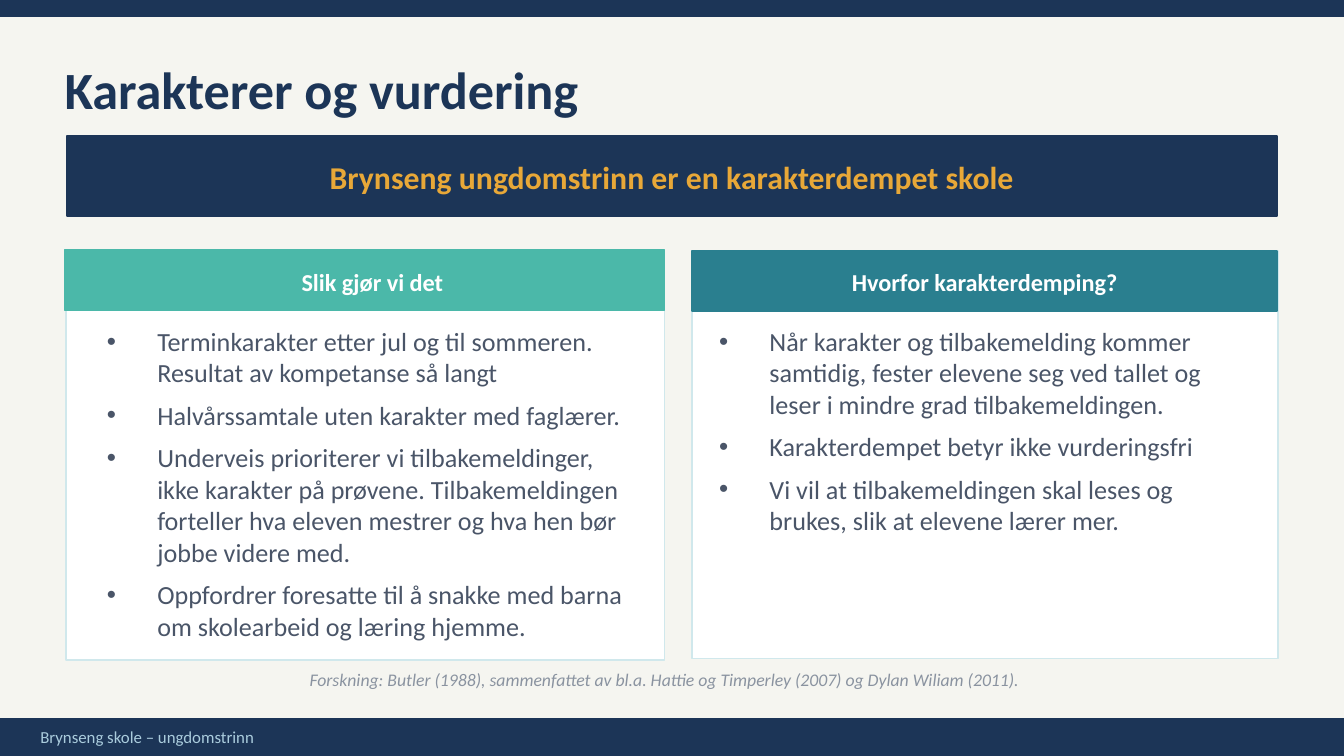
from lxml.etree import SubElement
from pptx import Presentation
from pptx.dml.color import RGBColor
from pptx.enum.shapes import MSO_SHAPE
from pptx.enum.text import MSO_ANCHOR, MSO_AUTO_SIZE, PP_ALIGN
from pptx.oxml.ns import qn
from pptx.util import Pt

PX = 4572  # 200 px to the inch
WIDTH, HEIGHT = 2000, 1125
FONT = "Calibri"
COLORS = {
    "background": "F5F5F0", "navy": "1C3557", "amber": "E8A838",
    "green": "4BB8A9", "teal": "2A7F8F", "white": "FFFFFF",
    "border": "D0E8EC", "body": "4A5568", "source": "8A93A0",
    "footer": "AACCDD",
}

# Content; boxes are (left, top, width, height) in px
TITLE = "Karakterer og vurdering"
BANNER = "Brynseng ungdomstrinn er en karakterdempet skole"
SOURCE = ("Forskning: Butler (1988), sammenfattet av bl.a. Hattie og Timperley (2007) "
          "og Dylan Wiliam (2011).")
FOOTER = "Brynseng skole – ungdomstrinn"
CARDS = [
    {
        "heading": "Slik gjør vi det", "color": "green",
        "card": (98, 372, 891, 610), "header": (96, 372, 893, 90),
        "label": (119, 374, 870, 90), "list": (159, 484, 790, 480),
        "points": [
            "Terminkarakter etter jul og til sommeren. Resultat av kompetanse så langt",
            "Halvårssamtale uten karakter med faglærer.",
            "Underveis prioriterer vi tilbakemeldinger, ikke karakter på prøvene. "
            "Tilbakemeldingen forteller hva eleven mestrer og hva hen bør jobbe videre med.",
            "Oppfordrer foresatte til å snakke med barna om skolearbeid og læring hjemme.",
        ],
    },
    {
        "heading": "Hvorfor karakterdemping?", "color": "teal",
        "card": (1030, 374, 872, 606), "header": (1030, 374, 871, 89),
        "label": (1030, 374, 870, 90), "list": (1070, 484, 800, 478),
        "points": [
            "Når karakter og tilbakemelding kommer samtidig, fester elevene seg ved tallet "
            "og leser i mindre grad tilbakemeldingen.",
            "Karakterdempet betyr ikke vurderingsfri",
            "Vi vil at tilbakemeldingen skal leses og brukes, slik at elevene lærer mer.",
        ],
    },
]


def rgb(name):
    return RGBColor.from_string(COLORS[name])


def emu(box):
    return [value * PX for value in box]


def add_rectangle(slide, box, fill, line=None):
    shape = slide.shapes.add_shape(MSO_SHAPE.RECTANGLE, *emu(box))
    shape.shadow.inherit = False
    shape.fill.solid()
    shape.fill.fore_color.rgb = rgb(fill)
    shape.line.color.rgb = rgb(line or fill)
    shape.line.width = Pt(1)


def add_bullet(paragraph, indent=75):
    properties = paragraph._p.get_or_add_pPr()
    properties.set("marL", str(indent * PX))
    properties.set("indent", str(-indent * PX))
    SubElement(properties, qn("a:buFont")).set("typeface", "Arial")
    SubElement(properties, qn("a:buChar")).set("char", "•")


def write_text(slide, box, lines, size, color, placeholder=None, bold=False, italic=False,
               align=PP_ALIGN.LEFT, anchor=MSO_ANCHOR.MIDDLE, bullets=False, after=0):
    """Write lines in a new text box, or in a placeholder brought to the front."""
    if placeholder is None:
        shape = slide.shapes.add_textbox(*emu(box))
    else:
        shape = placeholder
        shape.left, shape.top, shape.width, shape.height = emu(box)
        shape.element.getparent().append(shape.element)
    frame = shape.text_frame
    frame.word_wrap = True
    frame.auto_size = MSO_AUTO_SIZE.NONE
    frame.vertical_anchor = anchor
    frame.margin_left = frame.margin_top = frame.margin_right = frame.margin_bottom = 0
    frame.text = "\n".join(lines)
    for paragraph in frame.paragraphs:
        paragraph.alignment = align
        paragraph.space_before = Pt(0)
        paragraph.space_after = Pt(after)
        if bullets:
            add_bullet(paragraph)
        font = paragraph.runs[0].font
        font.name, font.size = FONT, Pt(size)
        font.bold, font.italic = bold, italic
        font.color.rgb = rgb(color)


def main():
    presentation = Presentation()
    presentation.slide_width, presentation.slide_height = WIDTH * PX, HEIGHT * PX
    slide = presentation.slides.add_slide(presentation.slide_layouts.get_by_name("Two Content"))
    title, *bodies = slide.placeholders
    slide.background.fill.solid()
    slide.background.fill.fore_color.rgb = rgb("background")

    # Top and bottom bars
    add_rectangle(slide, (0, 0, WIDTH, 24), "navy")
    add_rectangle(slide, (0, 1070, WIDTH, 55), "navy")
    write_text(slide, (60, 1073, 1880, 48), [FOOTER], 9, "footer")

    # Title and banner
    write_text(slide, (96, 67, 1800, 130), [TITLE], 28, "navy", placeholder=title, bold=True)
    banner_box = (100, 202, 1800, 120)
    add_rectangle(slide, banner_box, "navy")
    write_text(slide, (100, 203, 1800, 120), [BANNER], 17, "amber", bold=True,
               align=PP_ALIGN.CENTER)

    # Cards with heading and bullet list
    for card, body in zip(CARDS, bodies):
        add_rectangle(slide, card["card"], "white", line="border")
        add_rectangle(slide, card["header"], card["color"])
        write_text(slide, card["label"], [card["heading"]], 13, "white", bold=True,
                   align=PP_ALIGN.CENTER)
        write_text(slide, card["list"], card["points"], 14, "body", placeholder=body,
                   anchor=MSO_ANCHOR.TOP, bullets=True, after=6)

    # Source line
    write_text(slide, (89, 981, 1800, 60), [SOURCE], 9.5, "source", italic=True,
               align=PP_ALIGN.CENTER)
    presentation.save("out.pptx")


if __name__ == "__main__":
    main()
